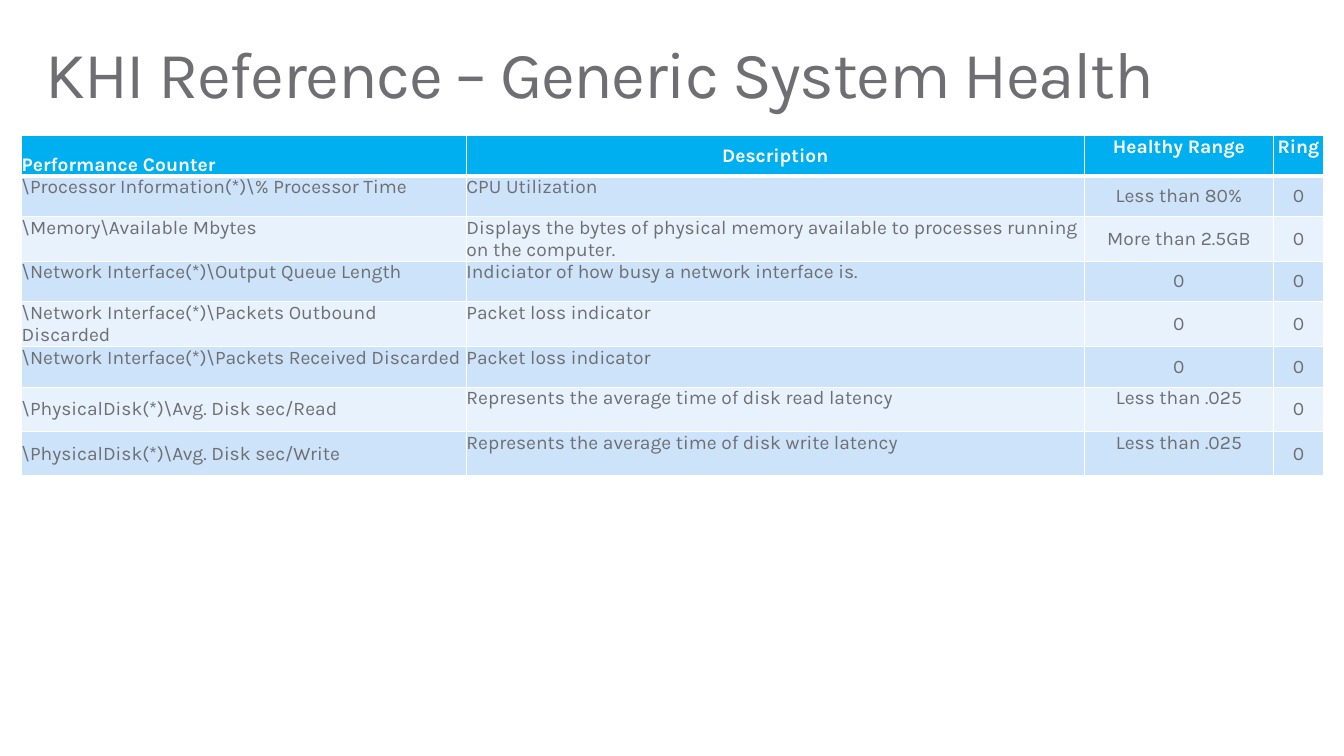
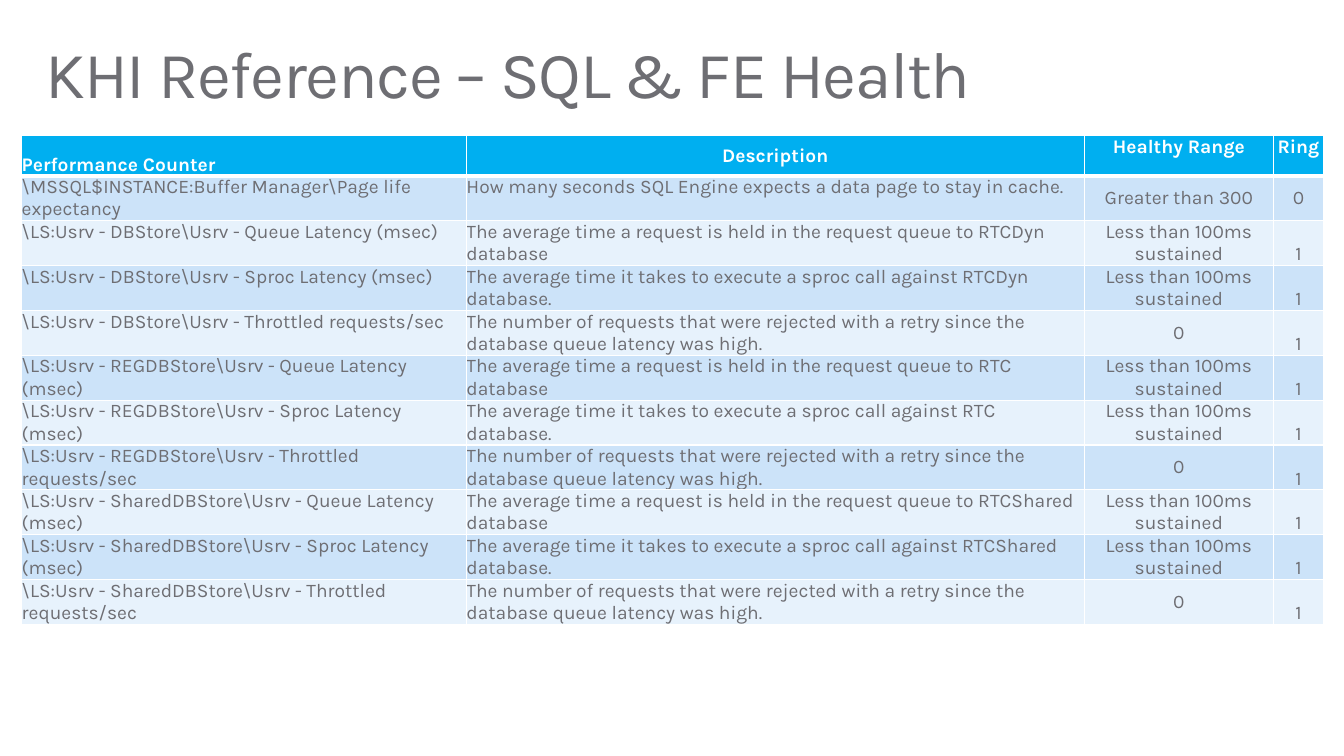
from dataclasses import dataclass

from lxml import etree
from pptx import Presentation
from pptx.dml.color import RGBColor
from pptx.enum.text import MSO_ANCHOR, MSO_AUTO_SIZE, PP_ALIGN
from pptx.oxml.ns import qn
from pptx.slide import Slide
from pptx.table import _Cell
from pptx.util import Inches, Pt

TOP, MIDDLE, BOTTOM = MSO_ANCHOR.TOP, MSO_ANCHOR.MIDDLE, MSO_ANCHOR.BOTTOM
LEFT, CENTER = PP_ALIGN.LEFT, PP_ALIGN.CENTER
NO_AUTOFIT = MSO_AUTO_SIZE.NONE

FONT = "Karla"
COLORS = {
    "text": "6E6E73",
    "header": "00AFF0",
    "header_text": "FFFFFF",
    "border": "FFFFFF",
    "odd_row": "CCE3F9",
    "even_row": "E7F2FC",
}
TITLE_ONLY_LAYOUT = 5
HEADINGS = ("Performance Counter", "Description", "Healthy Range", "Ring")
HEADING_ANCHORS = (BOTTOM, MIDDLE, TOP, TOP)
ALIGNMENTS = (LEFT, LEFT, CENTER, CENTER)
HEADING_ALIGNMENTS = (LEFT, CENTER, CENTER, CENTER)
COLUMN_WIDTHS = (4.5, 6.25, 1.92, 0.5)
TABLE_LEFT, TABLE_TOP = 0.22, 1.37
ROW_HEIGHT, TALL_ROW_HEIGHT = 0.41, 0.45
THIN_BORDER, THICK_BORDER = 1, 3


@dataclass(frozen=True)
class Counter:
    name: str
    description: str
    healthy_range: str
    ring: str = "0"
    tall: bool = False
    name_anchor: MSO_ANCHOR = TOP
    range_anchor: MSO_ANCHOR = MIDDLE
    ring_anchor: MSO_ANCHOR = MIDDLE

    def texts(self) -> tuple[str, ...]:
        return self.name, self.description, self.healthy_range, self.ring

    def anchors(self) -> tuple[MSO_ANCHOR, ...]:
        return self.name_anchor, TOP, self.range_anchor, self.ring_anchor


@dataclass(frozen=True)
class Reference:
    title: str
    counters: list[Counter]


def disk_counter(operation: str) -> Counter:
    return Counter(
        rf"\PhysicalDisk(*)\Avg. Disk sec/{operation}",
        f"Represents the average time of disk {operation.lower()} latency",
        "Less than .025", tall=True, name_anchor=MIDDLE, range_anchor=TOP,
    )


def store_counters(store: str, database: str) -> list[Counter]:
    """Return the queue, sproc and throttling counters of one store."""
    measures = (
        ("Queue Latency (msec)",
         f"The average time a request is held in the request queue to {database} database",
         "Less than 100ms sustained"),
        ("Sproc Latency (msec)",
         f"The average time it takes to execute a sproc call against {database} database.",
         "Less than 100ms sustained"),
        ("Throttled requests/sec",
         "The number of requests that were rejected with a retry since the "
         "database queue latency was high.",
         "0"),
    )
    return [
        Counter(rf"\LS:Usrv - {store}\Usrv - {measure}", description, healthy_range,
                ring="1", tall=True, ring_anchor=BOTTOM)
        for measure, description, healthy_range in measures
    ]


REFERENCES = (
    Reference("KHI Reference – Generic System Health", [
        Counter(r"\Processor Information(*)\% Processor Time", "CPU Utilization",
                "Less than 80%"),
        Counter(r"\Memory\Available Mbytes",
                "Displays the bytes of physical memory available to processes "
                "running on the computer.",
                "More than 2.5GB", tall=True),
        Counter(r"\Network Interface(*)\Output Queue Length",
                "Indiciator of how busy a network interface is.", "0"),
        Counter(r"\Network Interface(*)\Packets Outbound Discarded",
                "Packet loss indicator", "0", tall=True),
        Counter(r"\Network Interface(*)\Packets Received Discarded",
                "Packet loss indicator", "0"),
        disk_counter("Read"),
        disk_counter("Write"),
    ]),
    Reference("KHI Reference – SQL & FE Health", [
        Counter(r"\MSSQL$INSTANCE:Buffer Manager\Page life expectancy",
                "How many seconds SQL Engine expects a data page to stay in cache.",
                "Greater than 300", tall=True, name_anchor=MIDDLE),
        *store_counters("DBStore", "RTCDyn"),
        *store_counters("REGDBStore", "RTC"),
        *store_counters("SharedDBStore", "RTCShared"),
    ]),
)


def add_title(page: Slide, text: str) -> None:
    title = page.shapes.title
    title.left, title.top = Inches(0.3), Inches(0.32)
    title.width, title.height = Inches(13), Inches(1)
    frame = title.text_frame
    frame.text = text
    frame.word_wrap = True
    frame.auto_size = NO_AUTOFIT
    frame.vertical_anchor = TOP
    frame.margin_left = frame.margin_right = Inches(0.16)
    frame.margin_top = frame.margin_bottom = Inches(0.1)
    para = frame.paragraphs[0]
    para.alignment = LEFT
    para.line_spacing = 0.9
    span = para.runs[0]
    span.font.name, span.font.size = FONT, Pt(48)
    span.font.color.rgb = RGBColor.from_string(COLORS["text"])
    span.font._element.set("spc", "-100")


def set_borders(cell: _Cell, top: int, bottom: int) -> None:
    """Draw the four borders, with the top and bottom widths in points."""
    properties = cell._tc.get_or_add_tcPr()
    widths = {"lnL": THIN_BORDER, "lnR": THIN_BORDER, "lnT": top, "lnB": bottom}
    for index, (side, width) in enumerate(widths.items()):
        line = etree.Element(qn(f"a:{side}"), w=str(Pt(width)))
        fill = etree.SubElement(line, qn("a:solidFill"))
        etree.SubElement(fill, qn("a:srgbClr"), val=COLORS["border"])
        properties.insert(index, line)


def fill_cell(cell: _Cell, text: str, anchor: MSO_ANCHOR, alignment: PP_ALIGN,
              fill: str, color: str, bold: bool) -> None:
    cell.margin_left = cell.margin_right = cell.margin_top = cell.margin_bottom = 0
    cell.vertical_anchor = anchor
    cell.fill.solid()
    cell.fill.fore_color.rgb = RGBColor.from_string(COLORS[fill])
    cell.text_frame.text = text
    para = cell.text_frame.paragraphs[0]
    para.alignment = alignment
    font = para.runs[0].font
    font.name, font.size, font.bold = FONT, Pt(14), bold
    font.color.rgb = RGBColor.from_string(COLORS[color])


def add_counter_table(page: Slide, counters: list[Counter]) -> None:
    heights = [ROW_HEIGHT] + [
        TALL_ROW_HEIGHT if counter.tall else ROW_HEIGHT for counter in counters
    ]
    table = page.shapes.add_table(
        len(heights), len(HEADINGS), Inches(TABLE_LEFT), Inches(TABLE_TOP),
        Inches(sum(COLUMN_WIDTHS)), Inches(sum(heights)),
    ).table
    table.horz_banding = False
    for column, width in zip(table.columns, COLUMN_WIDTHS):
        column.width = Inches(width)
    for row, height in zip(table.rows, heights):
        row.height = Inches(height)

    for column, heading in enumerate(HEADINGS):
        cell = table.cell(0, column)
        fill_cell(cell, heading, HEADING_ANCHORS[column], HEADING_ALIGNMENTS[column],
                  "header", "header_text", True)
        set_borders(cell, THIN_BORDER, THICK_BORDER)

    for row, counter in enumerate(counters, start=1):
        fill = "odd_row" if row % 2 else "even_row"
        top = THICK_BORDER if row == 1 else THIN_BORDER
        values = zip(counter.texts(), counter.anchors(), ALIGNMENTS)
        for column, (text, anchor, alignment) in enumerate(values):
            cell = table.cell(row, column)
            fill_cell(cell, text, anchor, alignment, fill, "text", False)
            set_borders(cell, top, THIN_BORDER)


def main() -> None:
    deck = Presentation()
    deck.slide_width, deck.slide_height = Inches(13.6), Inches(7.65)
    for reference in REFERENCES:
        page = deck.slides.add_slide(deck.slide_layouts[TITLE_ONLY_LAYOUT])
        add_title(page, reference.title)
        add_counter_table(page, reference.counters)
    deck.save("out.pptx")


if __name__ == "__main__":
    main()
